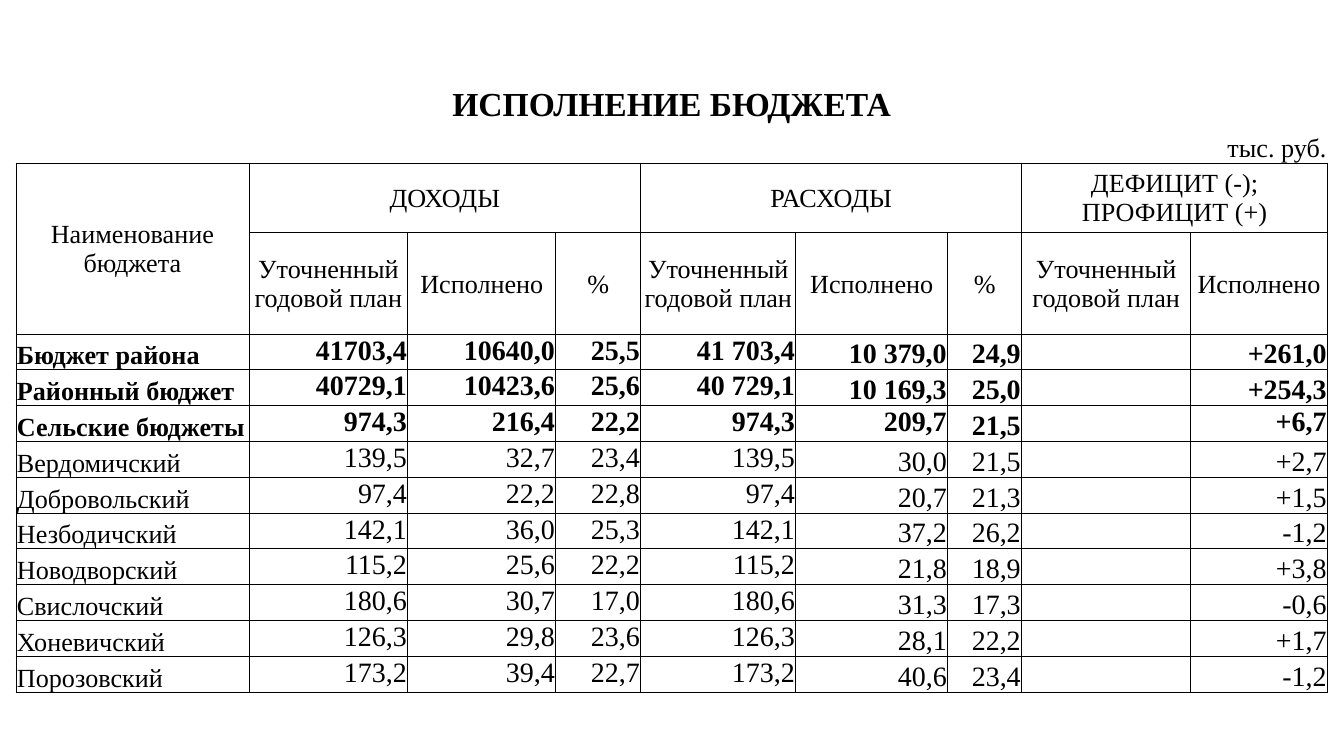
import itertools
from dataclasses import dataclass

import lxml.etree
import pptx
import pptx.dml.color
import pptx.enum.text
import pptx.oxml.ns
import pptx.util

PX = 914400 / 134.4
TOP, MID, LOW = (pptx.enum.text.MSO_ANCHOR.TOP, pptx.enum.text.MSO_ANCHOR.MIDDLE,
                 pptx.enum.text.MSO_ANCHOR.BOTTOM)
LEFT, CENTER, RIGHT = (pptx.enum.text.PP_ALIGN.LEFT, pptx.enum.text.PP_ALIGN.CENTER,
                       pptx.enum.text.PP_ALIGN.RIGHT)
PLAIN = "{2D5ABB26-0587-4C30-8999-92F81FD0307C}"  # no style, no grid


@dataclass(frozen=True)
class Theme:
    font: str = "Times New Roman"
    ink: str = "000000"
    line: float = 0.5
    title: int = 18
    label: int = 14
    value: int = 15


THEME = Theme()

# Grid: widths and heights in px
COLS = [233, 136, 23, 98, 50, 85, 155, 121, 31, 74, 169, 16, 121]
HEAD = [46, 35, 70, 102]
BODY = 358

# Column spans as (first, last)
UNIT = [(2, 3), (4, 5), (8, 9), (10, 11)]
GROUPS = [(1, 5, "ДОХОДЫ"), (6, 9, "РАСХОДЫ"), (10, 12, "ДЕФИЦИТ (-); ПРОФИЦИТ (+)")]
LEAVES = [(0, 0), (1, 2), (3, 4), (5, 5), (6, 6), (7, 8), (9, 9), (10, 10), (11, 12)]
PLAN, DONE = "Уточненный годовой план", "Исполнено"
LABELS = [PLAN, DONE, "%", PLAN, DONE, "%", PLAN, DONE]

TOTALS = 3  # leading rows in bold
RURAL = "Сельские бюджеты"
DATA = [
    ("Бюджет района", "41703,4", "10640,0", "25,5", "41 703,4", "10 379,0", "24,9", "", "+261,0"),
    ("Районный бюджет", "40729,1", "10423,6", "25,6", "40 729,1", "10 169,3", "25,0", "", "+254,3"),
    (RURAL, "974,3", "216,4", "22,2", "974,3", "209,7", "21,5", "", "+6,7"),
    ("Вердомичский", "139,5", "32,7", "23,4", "139,5", "30,0", "21,5", "", "+2,7"),
    ("Добровольский", "97,4", "22,2", "22,8", "97,4", "20,7", "21,3", "", "+1,5"),
    ("Незбодичский", "142,1", "36,0", "25,3", "142,1", "37,2", "26,2", "", "-1,2"),
    ("Новодворский", "115,2", "25,6", "22,2", "115,2", "21,8", "18,9", "", "+3,8"),
    ("Свислочский", "180,6", "30,7", "17,0", "180,6", "31,3", "17,3", "", "-0,6"),
    ("Хоневичский", "126,3", "29,8", "23,6", "126,3", "28,1", "22,2", "", "+1,7"),
    ("Порозовский", "173,2", "39,4", "22,7", "173,2", "40,6", "23,4", "", "-1,2"),
]


def emu(px):
    return pptx.util.Emu(round(px * PX))


def border(cell, sides):
    props = cell._tc.get_or_add_tcPr()
    qn = pptx.oxml.ns.qn
    for side in "LRTB":
        line = lxml.etree.SubElement(props, qn("a:ln" + side))
        if side in sides:
            line.set("w", str(pptx.util.Pt(THEME.line)))
            fill = lxml.etree.SubElement(line, qn("a:solidFill"))
            lxml.etree.SubElement(fill, qn("a:srgbClr")).set("val", THEME.ink)
        else:
            line.set("w", "0")
            lxml.etree.SubElement(line, qn("a:noFill"))


def prepare(cell, sides):
    border(cell, sides)
    cell.fill.background()
    cell.margin_left = cell.margin_right = cell.margin_top = emu(1)
    cell.margin_bottom = 0
    # Keep empty cells from stretching their row
    end = cell.text_frame.paragraphs[0]._p.get_or_add_endParaRPr()
    end.set("sz", str(THEME.label * 100))


def write(cell, text, size, align=CENTER, anchor=MID, bold=False):
    cell.vertical_anchor = anchor
    para = cell.text_frame.paragraphs[0]
    para.alignment = align
    if not text:
        return
    run = para.add_run()
    run.text = text
    font = run.font
    font.name, font.size, font.bold = THEME.font, pptx.util.Pt(size), bold
    font.color.rgb = pptx.dml.color.RGBColor.from_string(THEME.ink)


def join(grid, row, first, last, end=None):
    cell = grid.cell(row, first)
    end = row if end is None else end
    if (row, first) != (end, last):
        cell.merge(grid.cell(end, last))
    return cell


def header(grid):
    # Title and unit
    write(join(grid, 0, 0, 12), "ИСПОЛНЕНИЕ БЮДЖЕТА", THEME.title, bold=True)
    for first, last in UNIT:
        join(grid, 1, first, last)
    write(grid.cell(1, 12), "тыс. руб.", THEME.label, RIGHT, LOW)
    # Column heads
    write(join(grid, 2, 0, 0, 3), "Наименование бюджета", THEME.label)
    for first, last, text in GROUPS:
        write(join(grid, 2, first, last), text, THEME.label)
    for (first, last), text in zip(LEAVES[1:], LABELS):
        write(join(grid, 3, first, last), text, THEME.label)


def body(grid):
    for row, record in enumerate(DATA, len(HEAD)):
        bold = row < len(HEAD) + TOTALS
        # Income and spending plan sit high, the rest sit low
        high = {1, 2, 3, 4} | ({5, 8} if record[0] == RURAL else set())
        for num, ((first, last), text) in enumerate(zip(LEAVES, record)):
            size, align = (THEME.value, RIGHT) if num else (THEME.label, LEFT)
            anchor = TOP if num in high else LOW
            write(join(grid, row, first, last), text, size, align, anchor, bold)


def budget(slide, left, top, width, height):
    count = len(DATA)
    frame = slide.shapes.add_table(len(HEAD) + count, len(COLS),
                                   emu(left), emu(top), emu(width), emu(height))
    grid = frame.table
    grid.first_row = grid.horz_banding = False
    grid._tbl.tblPr.find(pptx.oxml.ns.qn("a:tableStyleId")).text = PLAIN
    # Sizes
    edges = [BODY * num // count for num in range(count + 1)]
    rows = HEAD + [low - high for high, low in zip(edges, edges[1:])]
    for col, size in zip(grid.columns, COLS):
        col.width = emu(size)
    for row, size in zip(grid.rows, rows):
        row.height = emu(size)
    # Borders: none on the title, a base line under the unit, then a full grid
    for row, col in itertools.product(range(len(rows)), range(len(COLS))):
        prepare(grid.cell(row, col), ["", "B"][row] if row < 2 else "LRTB")
    header(grid)
    body(grid)


def main():
    deck = pptx.Presentation()
    deck.slide_width, deck.slide_height = emu(1344), emu(756)
    slide = deck.slides.add_slide(deck.slide_layouts[6])
    budget(slide, 16, 82, sum(COLS), sum(HEAD) + BODY)
    deck.save("out.pptx")


if __name__ == "__main__":
    main()
